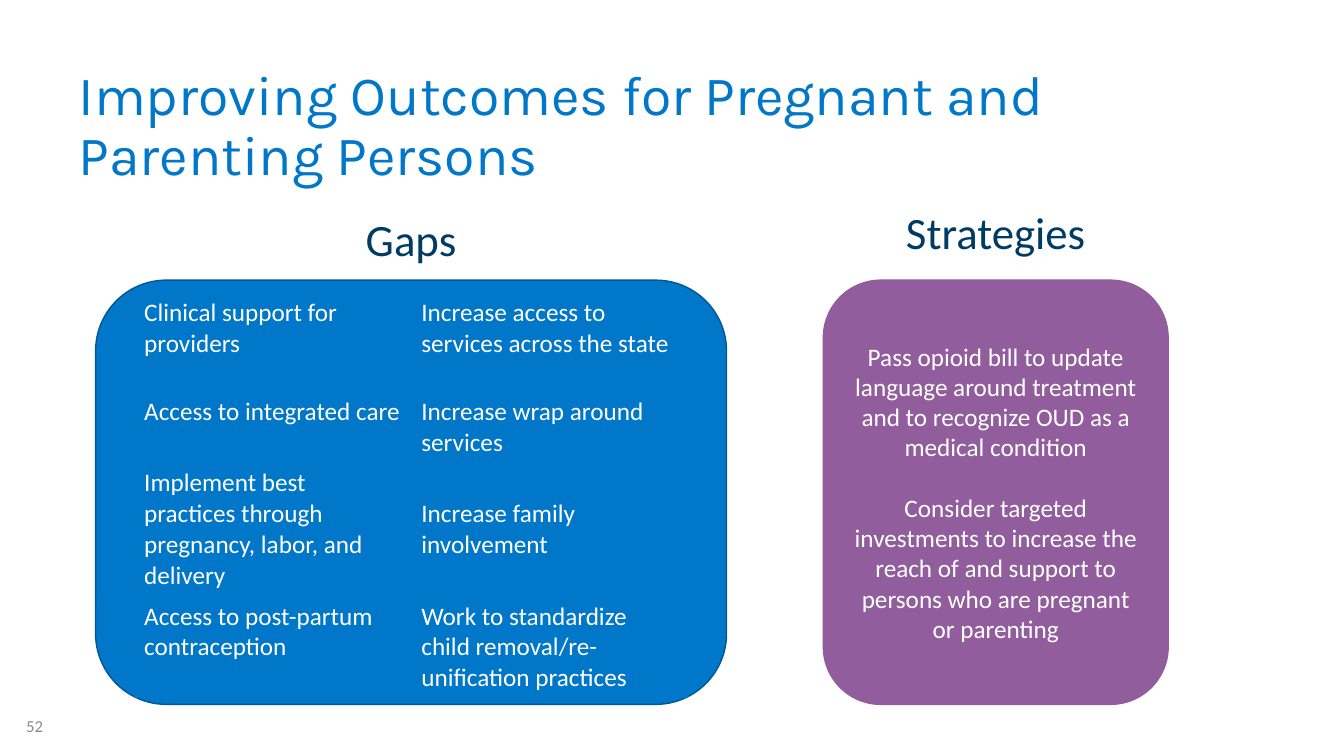
from pptx import Presentation
from pptx.dml.color import RGBColor as RGB
from pptx.enum.shapes import MSO_SHAPE as Shape
from pptx.enum.text import MSO_ANCHOR as Anchor, MSO_AUTO_SIZE as Fit, PP_ALIGN as Align
from pptx.oxml.ns import qn
from pptx.util import Cm, Pt

COLORS = {"blue": "0077C8", "edge": "005894", "navy": "003B64",
          "purple": "925D9C", "gray": "8C8C8C", "white": "FFFFFF"}
PLAIN = "{2D5ABB26-0587-4C30-8999-92F81FD0307C}"  # no style, no grid

GAPS = [
    ("Clinical support for providers",
     "Increase access to services across the state"),
    ("Access to integrated care", "Increase wrap around services"),
    ("Implement best practices through pregnancy, labor, and delivery",
     "Increase family involvement"),
    ("Access to post-partum contraception",
     "Work to standardize child removal/re-unification practices"),
]
PLANS = [
    "Pass opioid bill to update language around treatment "
    "and to recognize OUD as a medical condition",
    "Consider targeted investments to increase the reach of and support "
    "to persons who are pregnant or parenting",
]


class Deck:
    def __init__(self, wide, high, font="Calibri"):
        self.prs = Presentation()
        self.prs.slide_width, self.prs.slide_height = Cm(wide), Cm(high)
        self.slide = self.prs.slides.add_slide(self.prs.slide_layouts[6])
        self.font = font

    def color(self, name):
        return RGB.from_string(COLORS[name])

    def fill_in(self, frame, lines, size, color, font=None, align=Align.LEFT,
                gap=0, lead=None):
        frame.word_wrap = True
        for i, line in enumerate(lines):
            para = frame.add_paragraph() if i else frame.paragraphs[0]
            para.alignment = align
            if i:
                para.space_before = Pt(gap)
            if lead:
                para.line_spacing = lead
            run = para.add_run()
            run.text = line
            run.font.name = font or self.font
            run.font.size = Pt(size)
            run.font.color.rgb = self.color(color)

    def text(self, box, line, size, color, anchor=Anchor.TOP, fit=Fit.NONE, **style):
        frame = self.slide.shapes.add_textbox(*map(Cm, box)).text_frame
        self.fill_in(frame, [line], size, color, **style)
        frame.vertical_anchor = anchor
        frame.auto_size = fit

    def panel(self, box, fill, edge):
        panel = self.slide.shapes.add_shape(Shape.ROUNDED_RECTANGLE, *map(Cm, box))
        panel.shadow.inherit = False
        panel.fill.solid()
        panel.fill.fore_color.rgb = self.color(fill)
        panel.line.color.rgb = self.color(edge)
        panel.line.width = Pt(1)
        panel.text_frame.vertical_anchor = Anchor.MIDDLE
        return panel.text_frame

    def table(self, box, rows, highs, size, fill, color):
        grid = self.slide.shapes.add_table(
            len(rows), len(rows[0]), *map(Cm, box)).table
        grid.first_row = grid.horz_banding = False
        grid._tbl.tblPr.find(qn("a:tableStyleId")).text = PLAIN
        for r, (row, high) in enumerate(zip(rows, highs)):
            grid.rows[r].height = Cm(high)
            for c, line in enumerate(row):
                cell = grid.cell(r, c)
                cell.fill.solid()
                cell.fill.fore_color.rgb = self.color(fill)
                self.fill_in(cell.text_frame, [line], size, color)
        return grid


def main():
    deck = Deck(33.87, 19.05)

    # Title and page number
    deck.text((1.73, 1.75, 30.25, 2.95),
              "Improving Outcomes for Pregnant and Parenting Persons",
              39.6, "blue", Anchor.MIDDLE, font="Karla", lead=0.9)
    deck.text((0.41, 18.06, 2.57, 0.46), "52", 12, "gray", Anchor.MIDDLE)

    # Gaps
    deck.panel((2.41, 7.06, 15.9, 10.69), "blue", "edge")
    grid = deck.table((3.38, 7.37, 13.97, 9.16), GAPS,
                      (2.49, 1.75, 3.17, 1.75), 18, "blue", "white")
    grid.cell(2, 1).vertical_anchor = Anchor.MIDDLE

    # Headings
    for box, word in (((7.92, 5.21, 4.88, 1.63), "Gaps"),
                      ((21.82, 5.03, 6.55, 1.63), "Strategies")):
        deck.text(box, word, 32, "navy", fit=Fit.SHAPE_TO_FIT_TEXT,
                  align=Align.CENTER)

    # Strategies
    frame = deck.panel((20.75, 7.06, 8.69, 10.69), "purple", "purple")
    deck.fill_in(frame, PLANS, 18, "white", align=Align.CENTER, gap=21.6)

    deck.prs.save("out.pptx")


if __name__ == "__main__":
    main()
